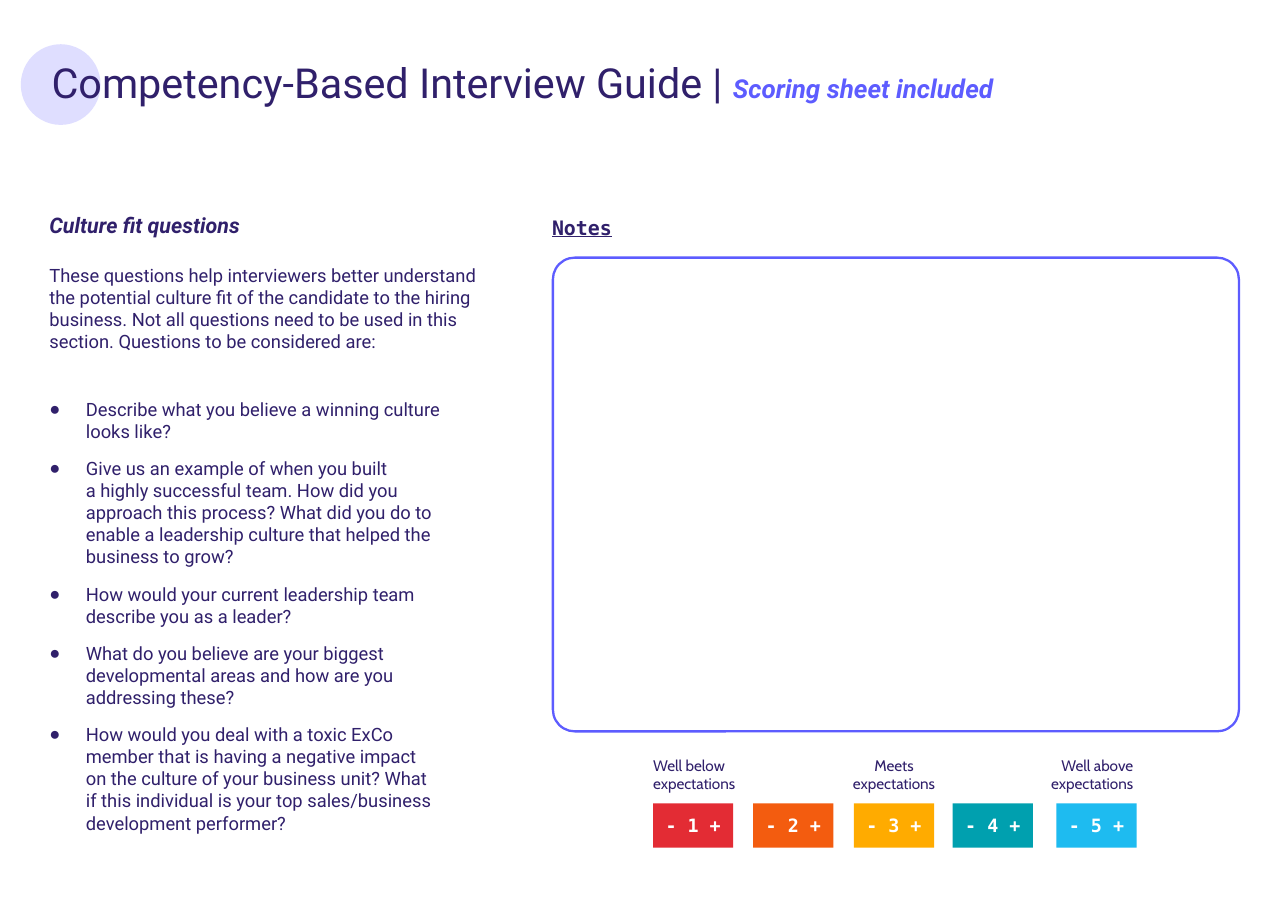
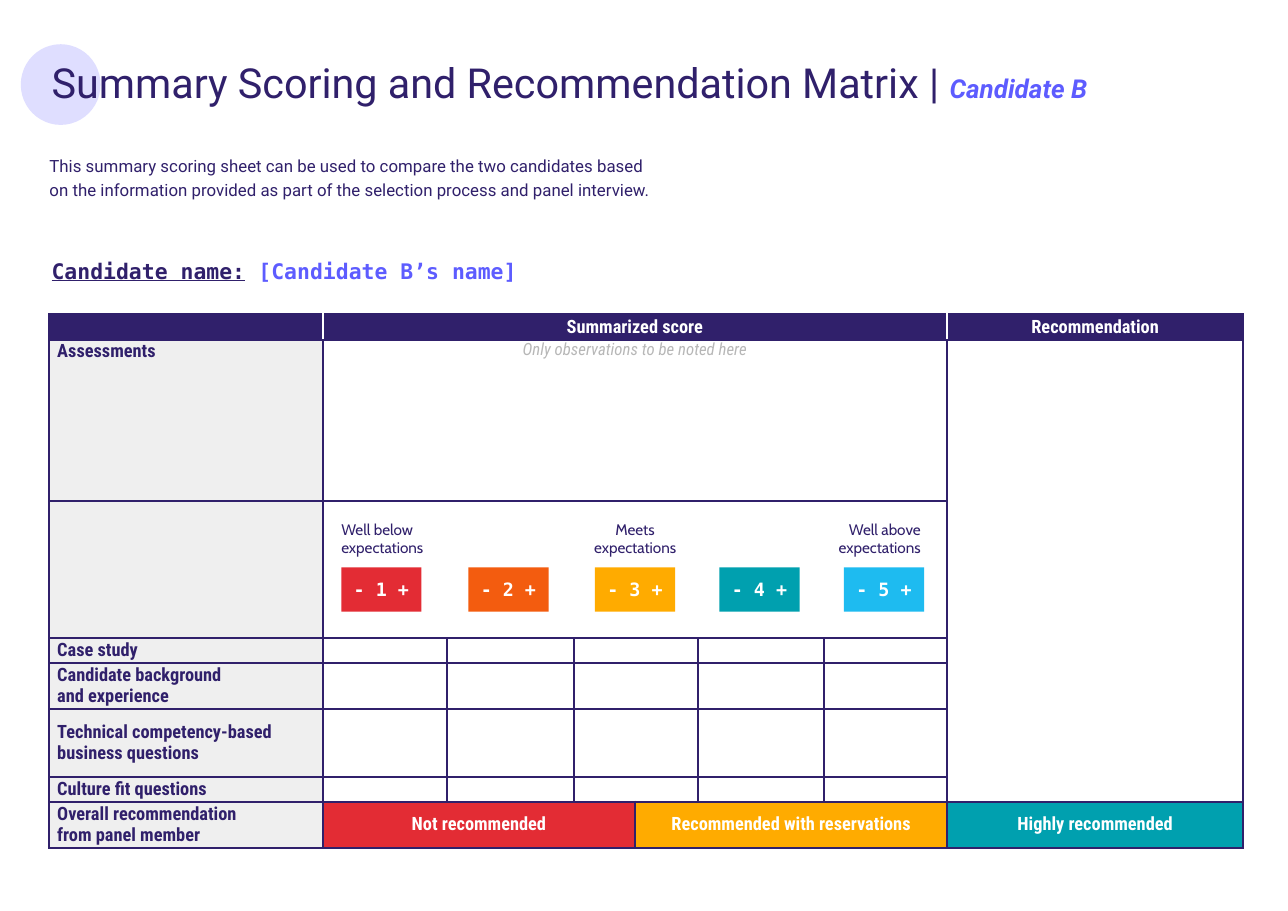
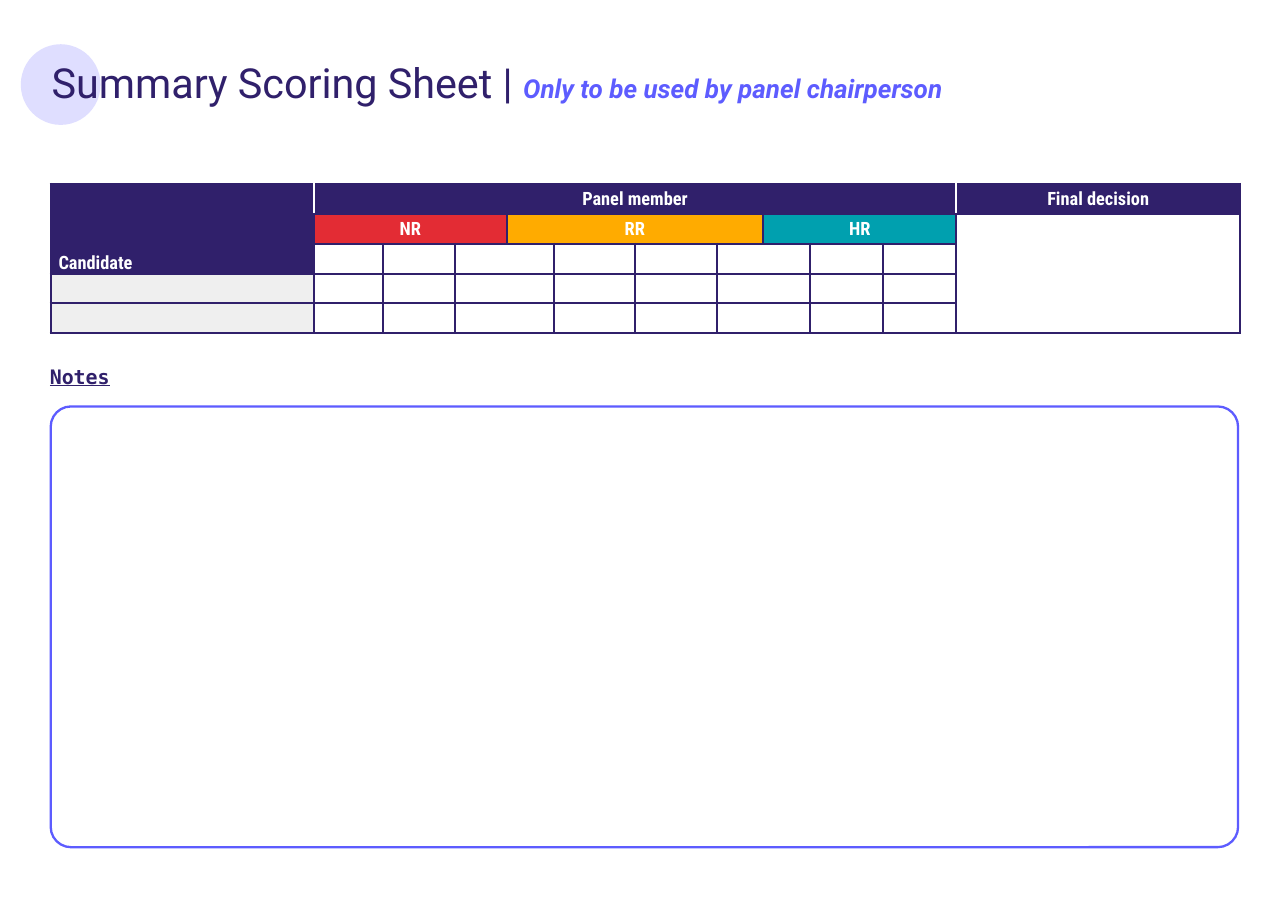
from lxml import etree
from pptx import Presentation
from pptx.dml.color import RGBColor
from pptx.enum import shapes, text
from pptx.oxml.ns import qn
from pptx.util import Cm, Pt

COLORS = {
    "navy": "30206B", "violet": "5D5CFF", "lilac": "DFDEFF", "white": "FFFFFF",
    "grey": "EFEFEF", "hint": "B7B7B7", "red": "E32C34", "orange": "F35C0F",
    "amber": "FFAB00", "teal": "00A0AF", "sky": "1EBBF0",
}
RGB = {name: RGBColor.from_string(value) for name, value in COLORS.items()}
MONO = "DejaVu Sans Mono"
CONDENSED = "Roboto Condensed"
LEFT, CENTER, RIGHT = (text.PP_ALIGN.LEFT, text.PP_ALIGN.CENTER, text.PP_ALIGN.RIGHT)
TOP, MIDDLE, BOTTOM = (text.MSO_ANCHOR.TOP, text.MSO_ANCHOR.MIDDLE, text.MSO_ANCHOR.BOTTOM)


def add_text(p, words, size, color="navy", font="Roboto", bold=False, italic=False,
             underline=False):
    """Add one run per line of words, with line breaks between them."""
    for i, line in enumerate(words.split("\n")):
        if i:
            p.add_line_break()
        r = p.add_run()
        r.text = line
        r.font.size, r.font.name = Pt(size), font
        r.font.color.rgb = RGB[color]
        r.font.bold, r.font.italic, r.font.underline = bold, italic, underline


def set_frame(sp, box=None):
    """Place a shape (left, top, width, height in cm) and return its wrapped, unpadded frame."""
    if box:
        sp.left, sp.top, sp.width, sp.height = (Cm(v) for v in box)
    tf = sp.text_frame
    tf.word_wrap, tf.auto_size = True, text.MSO_AUTO_SIZE.NONE
    tf.vertical_anchor = TOP
    tf.margin_left = tf.margin_top = tf.margin_right = tf.margin_bottom = 0
    return tf


prs = Presentation()
prs.slide_width, prs.slide_height = Cm(29.7), Cm(21)

# Shared title position on the master
master = prs.slide_master
set_frame(master.placeholders.get(shapes.PP_PLACEHOLDER.TITLE), (1.19, 1.45, 25.04, 2.13))

# Slides and their two-part titles
titles = [
    ("Competency-Based Interview Guide | ", "Scoring sheet included"),
    ("Summary Scoring and Recommendation Matrix | ", "Candidate B"),
    ("Summary Scoring Sheet | ", "Only to be used by panel chairperson"),
]
for main, accent in titles:
    s = prs.slides.add_slide(prs.slide_layouts[1])
    p = s.shapes.title.text_frame.paragraphs[0]
    p.alignment, p.line_spacing = LEFT, 0.9
    add_text(p, main, 27)
    add_text(p, accent, 17, "violet", bold=True, italic=True)
guide, matrix, summary = prs.slides

# Lilac circle, moved to the master so that it lies behind every title
circle = guide.shapes.add_shape(shapes.MSO_SHAPE.OVAL, Cm(0.48), Cm(1.02), Cm(1.84), Cm(1.86))
circle.shadow.inherit = False
circle.fill.solid()
circle.fill.fore_color.rgb = RGB["lilac"]
circle.line.fill.background()
circle._element.nvSpPr.cNvPr.id = 20
master.shapes._spTree.insert(2, circle._element)

# Notes heading and rounded notes area
for s, left, top, width, height in ((guide, 12.75, 5.94, 15.82, 10.92),
                                    (summary, 1.17, 9.37, 27.38, 10.16)):
    area = s.shapes.add_shape(shapes.MSO_SHAPE.ROUNDED_RECTANGLE,
                              Cm(left), Cm(top), Cm(width), Cm(height))
    area.adjustments[0] = 0.046
    area.shadow.inherit = False
    area.fill.solid()
    area.fill.fore_color.rgb = RGB["white"]
    area.line.color.rgb = RGB["violet"]
    area.line.width = Pt(1.5)
    heading = s.shapes.add_textbox(0, 0, 0, 0)
    p = set_frame(heading, (left - 0.02, top - 1.04, width, 0.81)).paragraphs[0]
    p.line_spacing = 1.14
    add_text(p, "Notes", 13, font=MONO, bold=True, underline=True)

# Slide 1: introduction
tf = set_frame(guide.shapes.add_textbox(0, 0, 0, 0), (1.14, 4.9, 10.11, 4))
add_text(tf.paragraphs[0], "Culture fit questions", 14, bold=True, italic=True)
p = tf.add_paragraph()
p.space_before = Pt(17)
add_text(p, "These questions help interviewers better understand the potential culture fit of the "
            "candidate to the hiring business. Not all questions need to be used in this section. "
            "Questions to be considered are:", 12)

# Slide 1: question list
questions = [
    "Describe what you believe a winning culture looks like?",
    "Give us an example of when you built\na highly successful team. How did you approach this "
    "process? What did you do to enable a leadership culture that helped the business to grow?",
    "How would your current leadership team describe you as a leader?",
    "What do you believe are your biggest developmental areas and how are you addressing these?",
    "How would you deal with a toxic ExCo\nmember that is having a negative impact\non the culture "
    "of your business unit? What\nif this individual is your top sales/business development "
    "performer?",
]
tf = set_frame(guide.placeholders[1], (0.71, 9.17, 10.34, 10.39))
for i, question in enumerate(questions):
    p = tf.add_paragraph() if i else tf.paragraphs[0]
    p.space_before = Pt(10 if i else 0)
    pPr = p._p.get_or_add_pPr()
    pPr.set("marL", str(Cm(1.27)))
    pPr.set("indent", str(-Cm(0.84)))
    bullet_color = etree.SubElement(pPr, qn("a:buClr"))
    etree.SubElement(bullet_color, qn("a:srgbClr"), val=COLORS["navy"])
    etree.SubElement(pPr, qn("a:buChar"), char="●")
    add_text(p, question, 12)

# Slide 2: introduction and candidate name
p = set_frame(matrix.placeholders[1], (1.14, 3.53, 14.05, 1.37)).paragraphs[0]
p.space_before, p.line_spacing = Pt(0), 1.15
pPr = p._p.get_or_add_pPr()
pPr.set("marL", "0")
pPr.set("indent", "0")
etree.SubElement(pPr, qn("a:buNone"))
add_text(p, "This summary scoring sheet can be used to compare the two candidates based on the "
            "information provided as part of the selection process and panel interview.", 11)

p = set_frame(matrix.shapes.add_textbox(0, 0, 0, 0), (1.19, 5.87, 27.36, 0.81)).paragraphs[0]
p.line_spacing = 1.14
add_text(p, "Candidate name:", 14, font=MONO, bold=True, underline=True)
add_text(p, " [Candidate B’s name]", 14, "violet", MONO, bold=True)

# Slide 3 has no body text
body = summary.placeholders[1]._element
body.getparent().remove(body)

# Table contents: (row, column): (words, fill, rows spanned, columns spanned)
matrix_cells = {
    (0, 0): ("", "navy", 1, 1),
    (0, 1): ("Summarized score", "navy", 1, 6),
    (0, 7): ("Recommendation", "navy", 1, 1),
    (1, 0): ("Assessments", "grey", 1, 1),
    (1, 1): ("", "white", 1, 6),
    (1, 7): ("", "white", 6, 1),
    (2, 0): ("", "grey", 1, 1),
    (2, 1): ("", "white", 1, 6),
    (7, 0): ("Overall recommendation\nfrom panel member", "grey", 1, 1),
    (7, 1): ("Not recommended", "red", 1, 3),
    (7, 4): ("Recommended with reservations", "amber", 1, 3),
    (7, 7): ("Highly recommended", "teal", 1, 1),
}
criteria = ["Case study", "Candidate background\nand experience",
            "Technical competency-based business questions", "Culture fit questions"]
for row, criterion in enumerate(criteria, 3):
    matrix_cells[row, 0] = (criterion, "grey", 1, 1)
    matrix_cells[row, 3] = ("", "white", 1, 2)

summary_cells = {
    (0, 0): ("Candidate", "navy", 3, 1),
    (0, 1): ("Panel member", "navy", 1, 10),
    (0, 11): ("Final decision", "navy", 1, 1),
    (1, 1): ("NR", "red", 1, 3),
    (1, 4): ("RR", "amber", 1, 4),
    (1, 8): ("HR", "teal", 1, 3),
    (1, 11): ("", "white", 4, 1),
    (3, 0): ("", "grey", 1, 1),
    (4, 0): ("", "grey", 1, 1),
}
for row in (2, 3, 4):
    for col in (3, 7):
        summary_cells[row, col] = ("", "white", 1, 2)

# Both tables
tables = [
    (matrix, 1.14, 7.24, matrix_cells,
     [6.3, 2.87, 2.92, 1.42, 1.45, 2.9, 2.84, 6.83],
     [0.6, 3.71, 3.16, 0.57, 1.06, 1.57, 0.57, 1.06]),
    (summary, 1.17, 4.24, summary_cells,
     [6.07, 1.6, 1.65, 1.19, 1.09, 1.88, 1.88, 1.07, 1.07, 1.7, 1.68, 6.55],
     [0.69] * 5),
]
grids = []
for s, left, top, cells, widths, heights in tables:
    table = s.shapes.add_table(len(heights), len(widths), Cm(left), Cm(top),
                               Cm(sum(widths)), Cm(sum(heights))).table
    grids.append(table)
    for column, width in zip(table.columns, widths):
        column.width = Cm(width)
    for table_row, height in zip(table.rows, heights):
        table_row.height = Cm(height)
    for row in range(len(heights)):
        for col in range(len(widths)):
            words, fill, row_span, col_span = cells.get((row, col), ("", "white", 1, 1))
            cell = table.cell(row, col)
            cell.margin_left = cell.margin_right = Cm(0.18)
            cell.margin_top = cell.margin_bottom = 0
            cell.vertical_anchor = MIDDLE
            # Borders: white between header cells, navy elsewhere
            inner = {"lnL": col > 0, "lnR": col < len(widths) - 1}
            for side in ("lnL", "lnR", "lnT", "lnB"):
                color = "white" if row == 0 and inner.get(side) else "navy"
                ln = etree.SubElement(cell._tc.get_or_add_tcPr(), qn("a:" + side),
                                      w=str(Pt(1.5)))
                solid = etree.SubElement(ln, qn("a:solidFill"))
                etree.SubElement(solid, qn("a:srgbClr"), val=COLORS[color])
            cell.fill.solid()
            cell.fill.fore_color.rgb = RGB[fill]
            p = cell.text_frame.paragraphs[0]
            p.alignment = CENTER if col else LEFT
            if words:
                add_text(p, words, 12, "navy" if fill == "grey" else "white", CONDENSED, bold=True)
            else:
                etree.SubElement(p._p, qn("a:endParaRPr"), sz="1000")
            if row_span * col_span > 1:
                cell.merge(table.cell(row + row_span - 1, col + col_span - 1))

# Cells that differ from the rule
matrix_table, summary_table = grids
summary_table.cell(0, 0).vertical_anchor = BOTTOM
matrix_table.cell(1, 0).vertical_anchor = TOP
observations = matrix_table.cell(1, 1)
observations.vertical_anchor = TOP
add_text(observations.text_frame.paragraphs[0], "Only observations to be noted here", 11, "hint",
         CONDENSED, italic=True)

# Five-step score scale with labels above the first, middle and last step
STEP_W, LABEL_W = 1.85, 2.49
for s, top, lefts in ((guide, 18.52, [15.06, 17.37, 19.69, 21.97, 24.36]),
                      (matrix, 13.08, [7.87, 10.8, 13.72, 16.59, 19.46])):
    for score, (left, color) in enumerate(zip(lefts, ("red", "orange", "amber", "teal", "sky")), 1):
        sp = s.shapes.add_shape(shapes.MSO_SHAPE.RECTANGLE, Cm(left), Cm(top), Cm(STEP_W), Cm(1.02))
        sp.shadow.inherit = False
        sp.fill.solid()
        sp.fill.fore_color.rgb = RGB[color]
        sp.line.fill.background()
        tf = set_frame(sp)
        tf.vertical_anchor = MIDDLE
        tf.paragraphs[0].alignment = CENTER
        add_text(tf.paragraphs[0], f"- {score} +", 12, "white", MONO, bold=True)
    labels = [
        ("Well below expectations", lefts[0], LEFT),
        ("Meets expectations", lefts[2] + (STEP_W - LABEL_W) / 2, CENTER),
        ("Well above expectations", lefts[4] + STEP_W - LABEL_W - 0.08, RIGHT),
    ]
    for words, left, align in labels:
        sp = s.shapes.add_textbox(0, 0, 0, 0)
        p = set_frame(sp, (left, top - 1.09, LABEL_W, 0.86)).paragraphs[0]
        p.alignment = align
        add_text(p, words, 10, font="Cabin")

prs.save("out.pptx")
